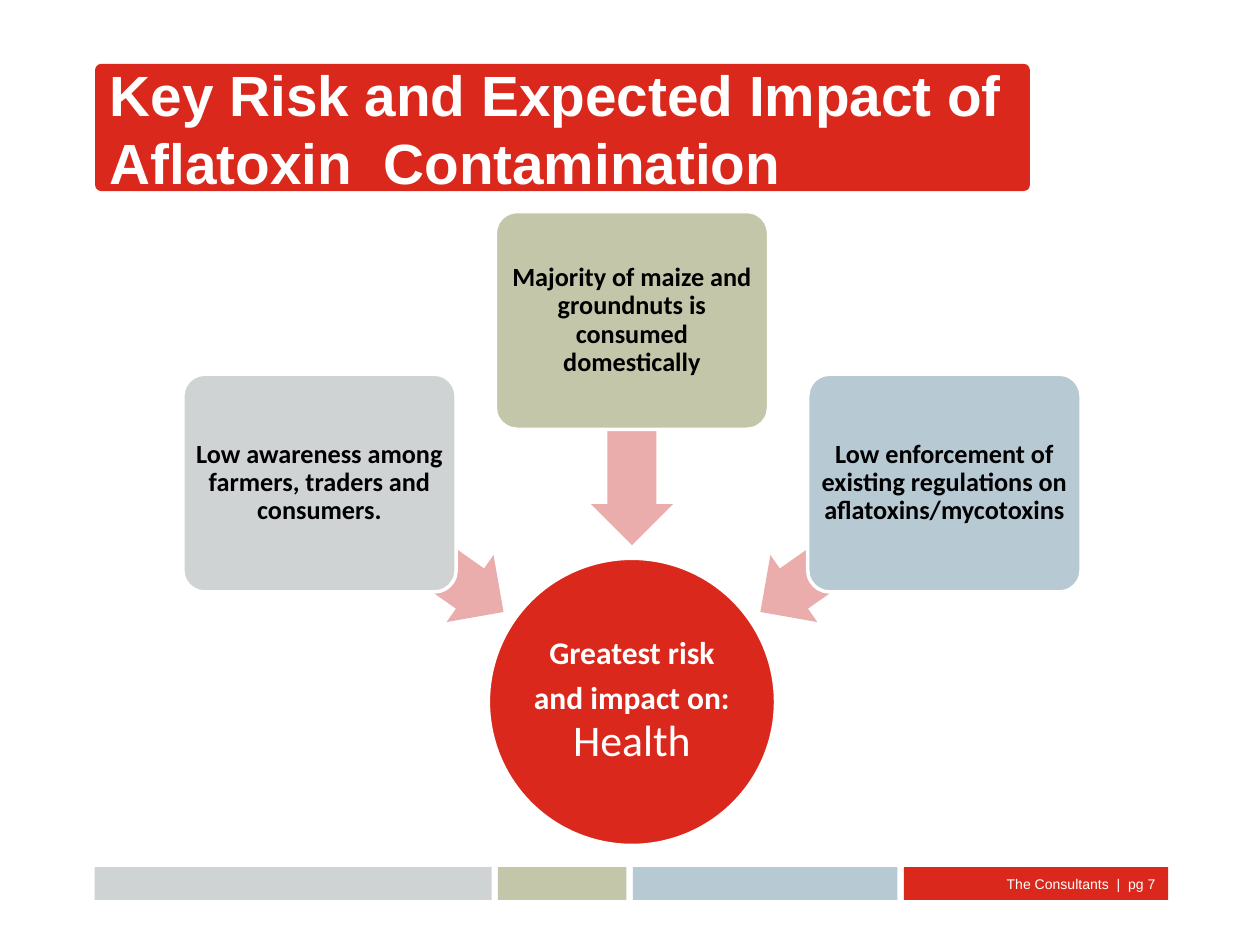
"""Build the slide on key risks and expected impact of aflatoxin contamination."""
from math import cos, radians, sin

from pptx import Presentation
from pptx.dml.color import RGBColor
from pptx.enum.shapes import MSO_SHAPE
from pptx.enum.text import MSO_ANCHOR, PP_ALIGN
from pptx.util import Cm, Pt

RED, GREY, OLIVE, BLUE = "DA291C", "D0D3D4", "C3C6A8", "B7C9D3"
WHITE, BLACK, PINK = "FFFFFF", "000000", "EAADAC"

TITLE = "Key Risk and Expected Impact of Aflatoxin  Contamination"
IMPACT = [
    ("Greatest risk and impact on:", 18, True),
    (" ", 25, True),
    ("Health", 25, False),
]
RISKS = [
    (215, GREY, "Low awareness among farmers, traders and consumers."),
    (270, OLIVE, "Majority of maize and groundnuts is consumed domestically"),
    (325, BLUE, "Low enforcement of existing regulations on aflatoxins/mycotoxins"),
]
FOOTER = [
    (8, GREY, ""),
    (2.59, OLIVE, ""),
    (5.33, BLUE, ""),
    (5.33, RED, "The Consultants  |  pg 7"),
]

HUB_X, HUB_Y, HUB_SIZE = 12.74, 14.15, 5.79
RISK_RADIUS, RISK_WIDTH, RISK_HEIGHT = 7.69, 5.51, 4.39
ARROW_RADIUS, ARROW_WIDTH, ARROW_HEIGHT = 5.42, 4.52, 1.65
FOOTER_LEFT, FOOTER_TOP, FOOTER_HEIGHT, FOOTER_GAP = 1.91, 17.48, 0.66, 0.13


def color(code):
    return RGBColor.from_string(code)


def add_part(slide, preset, place, fill, adjust=(), line=None, weight=2):
    part = slide.shapes.add_shape(preset, *map(Cm, place))
    part.shadow.inherit = False
    for index, value in enumerate(adjust):
        part.adjustments[index] = value
    part.fill.solid()
    part.fill.fore_color.rgb = color(fill)
    if line:
        part.line.color.rgb = color(line)
        part.line.width = Pt(weight)
    else:
        part.line.fill.background()
    return part


def write(part, runs, font, ink, align, inset=None, spacing=None):
    frame = part.text_frame
    frame.word_wrap = True
    frame.vertical_anchor = MSO_ANCHOR.MIDDLE
    if inset is not None:
        frame.margin_left = frame.margin_right = Cm(inset)
        frame.margin_top = frame.margin_bottom = Cm(inset)
    paragraph = frame.paragraphs[0]
    paragraph.alignment = align
    if spacing:
        paragraph.line_spacing = spacing
    for words, size, bold in runs:
        run = paragraph.add_run()
        run.text = words
        run.font.name = font
        run.font.size = Pt(size)
        run.font.bold = bold
        run.font.color.rgb = color(ink)


def around_hub(angle, radius, width, height):
    x = HUB_X + radius * cos(radians(angle))
    y = HUB_Y + radius * sin(radians(angle))
    return x - width / 2, y - height / 2, width, height


def add_footer(slide):
    left = FOOTER_LEFT
    for width, fill, words in FOOTER:
        place = (left, FOOTER_TOP, width, FOOTER_HEIGHT)
        segment = add_part(slide, MSO_SHAPE.ROUNDED_RECTANGLE, place, fill, [0])
        if words:
            write(segment, [(words, 8, False)], "Arial", WHITE, PP_ALIGN.RIGHT)
        left += width + FOOTER_GAP


def add_diagram(slide):
    hub_place = around_hub(0, 0, HUB_SIZE, HUB_SIZE)
    hub = add_part(slide, MSO_SHAPE.OVAL, hub_place, RED, line=WHITE)
    write(hub, IMPACT, "Calibri", WHITE, PP_ALIGN.CENTER, 0.03, 0.9)
    for angle, fill, words in RISKS:
        arrow_place = around_hub(angle, ARROW_RADIUS, ARROW_WIDTH, ARROW_HEIGHT)
        arrow = add_part(slide, MSO_SHAPE.LEFT_ARROW, arrow_place, PINK, [0.6, 0.5])
        arrow.rotation = angle
        risk_place = around_hub(angle, RISK_RADIUS, RISK_WIDTH, RISK_HEIGHT)
        risk = add_part(slide, MSO_SHAPE.ROUNDED_RECTANGLE, risk_place, fill, [0.1], WHITE)
        write(risk, [(words, 15, True)], "Calibri", BLACK, PP_ALIGN.CENTER, 0.08, 0.9)


def main():
    deck = Presentation()
    deck.slide_width, deck.slide_height = Cm(25.4), Cm(19.05)
    slide = deck.slides.add_slide(deck.slide_layouts[6])
    banner = add_part(slide, MSO_SHAPE.ROUNDED_RECTANGLE, (1.93, 1.3, 18.82, 2.54),
                      RED, [0.045], RED, 0.75)
    write(banner, [(TITLE, 32.4, True)], "Arial", WHITE, PP_ALIGN.LEFT)
    add_footer(slide)
    add_diagram(slide)
    deck.save("out.pptx")


if __name__ == "__main__":
    main()
